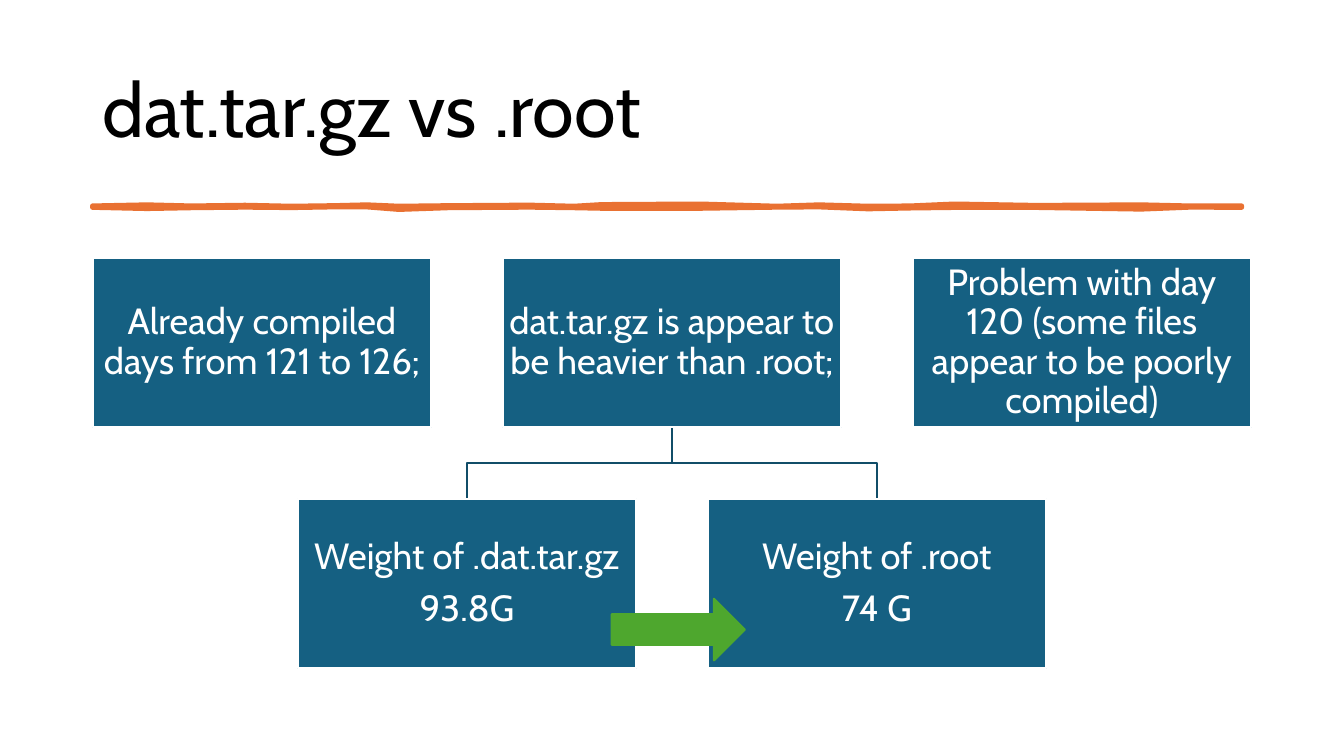
"""Build the slide that compares dat.tar.gz with .root files."""
from pptx import Presentation
from pptx import util as u
from pptx.dml.color import RGBColor
from pptx.enum import shapes, text

Pt = u.Pt


def paint(fmt, color):
    fmt.solid()
    fmt.fore_color.rgb = RGBColor.from_string(color)


def outline(shape, color, width):
    shape.shadow.inherit = False
    paint(shape.line.fill, color)
    shape.line.width = Pt(width)


deck = Presentation()
deck.slide_width, deck.slide_height = Pt(960), Pt(540)
page = deck.slides.add_slide(deck.slide_layouts[6])

title = page.shapes.add_textbox(Pt(66), Pt(28.8), Pt(828), Pt(104.4))
title.text_frame.word_wrap = True
title.text_frame.vertical_anchor = text.MSO_ANCHOR.MIDDLE
title.text_frame.text = "dat.tar.gz vs .root"
para = title.text_frame.paragraphs[0]
para.line_spacing = 0.9
para.font.size = Pt(54)
para.font.name = "Cabin"
paint(para.font.fill, "000000")

brush = [
    (66, 147, 148.3), (105, 146.2, 149.2), (137, 147, 148.6), (175, 146.5, 148.2),
    (208, 147.2, 148.5), (238, 146.8, 148), (262, 146.2, 148), (285, 147.2, 149.8),
    (320, 146.8, 148.6), (378, 146.4, 148.2), (410, 147.2, 148.6), (430, 146, 149),
    (500, 145.6, 149), (555, 147.2, 148.2), (585, 146.2, 148), (620, 147.2, 149.4),
    (650, 147, 148.8), (682, 145.6, 148.4), (740, 146.6, 148.4), (815, 146.2, 149.6),
    (850, 147, 148.2), (887, 147, 148.3),
]
edge = [(x, top) for x, top, _ in brush] + [(x, low) for x, _, low in reversed(brush)]
points = [(Pt(x), Pt(y)) for x, y in edge]
builder = page.shapes.build_freeform(*points[0])
builder.add_line_segments(points[1:], close=True)
stroke = builder.convert_to_shape()
paint(stroke.fill, "E97132")
outline(stroke, "E97132", 3.25)

width, height, pitch = 242, 121, 292.8
left, upper, lower = 66.2, 184.3, 356.4
center = left + pitch + width / 2
bend = (upper + height + lower) / 2
for side in (1, -1):
    child = center + side * pitch / 2
    builder = page.shapes.build_freeform(Pt(center), Pt(upper + height))
    builder.add_line_segments(
        [(Pt(center), Pt(bend)), (Pt(child), Pt(bend)), (Pt(child), Pt(lower))], close=False)
    branch = builder.convert_to_shape()
    branch.fill.background()
    outline(branch, "114D68", 1.5)

cards = [
    (0, upper, "Already compiled days from 121 to 126;"),
    (1, upper, "dat.tar.gz is appear to be heavier than .root;"),
    (0.5, lower, "Weight of .dat.tar.gz\n93.8G"),
    (1.5, lower, "Weight of .root\n74 G"),
    (2, upper, "Problem with day 120 (some files appear to be poorly compiled)"),
]
for column, top, words in cards:
    box = page.shapes.add_shape(
        shapes.MSO_SHAPE.RECTANGLE, Pt(left + column * pitch), Pt(top), Pt(width), Pt(height))
    paint(box.fill, "156082")
    outline(box, "FFFFFF", 1.5)
    frame = box.text_frame
    frame.word_wrap = True
    frame.vertical_anchor = text.MSO_ANCHOR.MIDDLE
    frame.margin_left = frame.margin_right = Pt(1.3)
    frame.margin_top = frame.margin_bottom = Pt(1.3)
    frame.text = words
    for para in frame.paragraphs:
        para.alignment = text.PP_ALIGN.CENTER
        para.line_spacing = 0.9
        para.space_after = Pt(9)
        para.font.size = Pt(26)
        para.font.name = "Cabin"
        paint(para.font.fill, "FFFFFF")

arrow = page.shapes.add_shape(
    shapes.MSO_SHAPE.RIGHT_ARROW, Pt(437), Pt(427.7), Pt(95), Pt(44))
paint(arrow.fill, "4EA72E")
outline(arrow, "4EA72E", 1.5)

deck.save("out.pptx")
